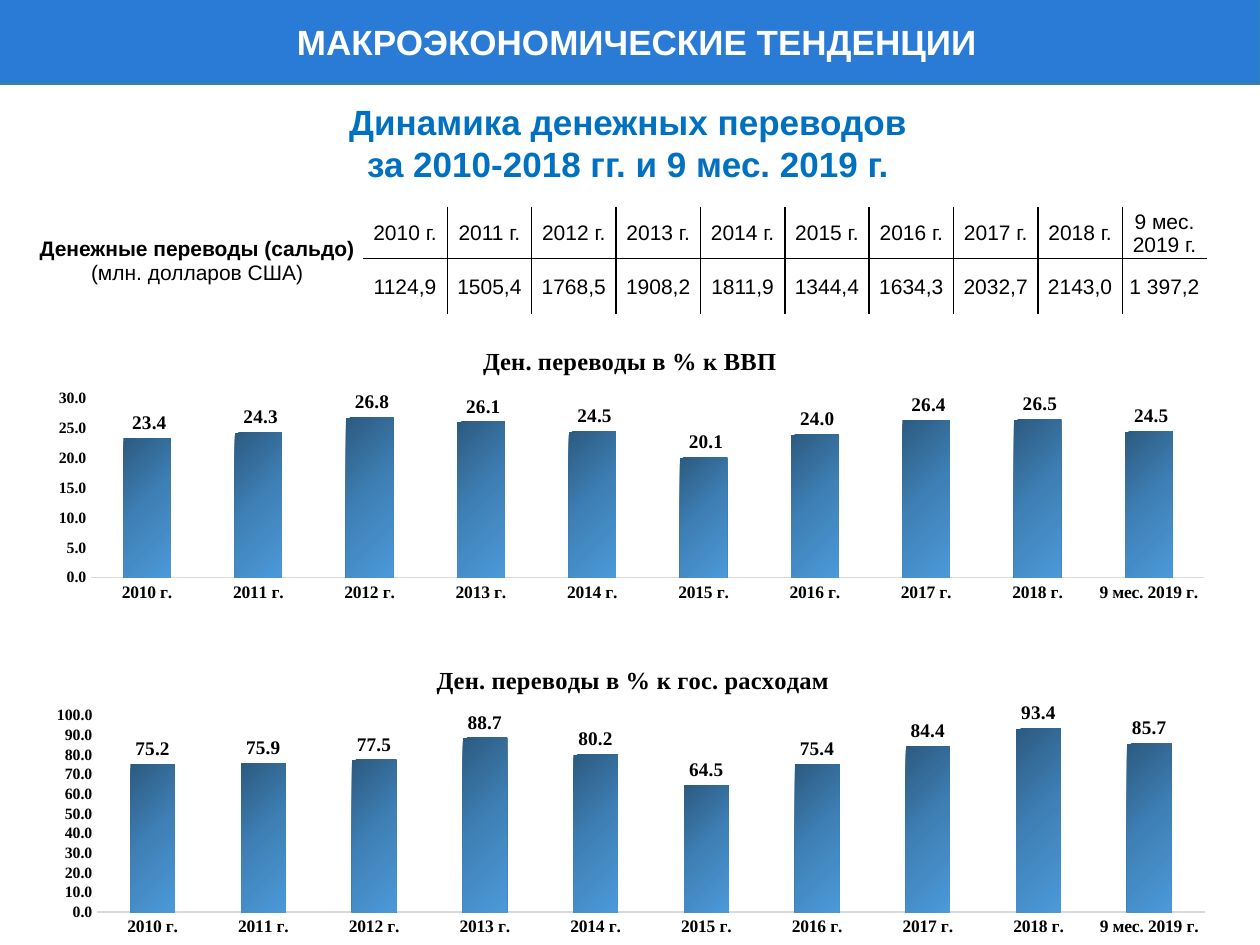
"""Build the remittance slide: heading band, balance table and two column charts."""
from pptx import Presentation, oxml, util as u
from pptx.chart.data import CategoryChartData
from pptx.dml.color import RGBColor
from pptx.enum import chart as ch, shapes, text
from pptx.oxml import ns

prs = Presentation()
prs.slide_width, prs.slide_height = u.Inches(10), u.Inches(7.5)
s = prs.slides.add_slide(prs.slide_layouts[6])
C = RGBColor.from_string


def box(x, y, w, h):
    W, H = prs.slide_width, prs.slide_height
    return [int(v * d / 100) for v, d in zip((x, y, w, h), (W, H, W, H))]


def style(font, color, **values):
    for name, value in values.items():
        setattr(font, name, value)
    font.color.rgb = C(color)


band = s.shapes.add_shape(shapes.MSO_SHAPE.RECTANGLE, *box(-0.1, -0.1, 100.1, 9))
band.shadow.inherit = False
band.fill.solid()
band.fill.fore_color.rgb = C("2A7BD5")
band.line.color.rgb = C("3B8594")
band.line.width = u.Pt(1)

headings = [
    (box(8.4, 1.5, 84.3, 5.9), "FFFFFF", ["МАКРОЭКОНОМИЧЕСКИЕ ТЕНДЕНЦИИ"]),
    (box(2.5, 10, 94.7, 10.3), "0070C0",
     ["Динамика денежных переводов", "за 2010-2018 гг. и 9 мес. 2019 г."]),
]
for place, color, lines in headings:
    tf = s.shapes.add_textbox(*place).text_frame
    tf.word_wrap = True
    tf.auto_size = text.MSO_AUTO_SIZE.SHAPE_TO_FIT_TEXT
    for i, line in enumerate(lines):
        p = tf.add_paragraph() if i else tf.paragraphs[0]
        p.alignment = text.PP_ALIGN.CENTER
        r = p.add_run()
        r.text = line
        style(r.font, color, size=u.Pt(20), name="Arial", bold=True)

years = [f"{y} г." for y in range(2010, 2019)] + ["9 мес. 2019 г."]
balance = ["1124,9", "1505,4", "1768,5", "1908,2", "1811,9",
           "1344,4", "1634,3", "2032,7", "2143,0", "1 397,2"]
rows = [["Денежные переводы (сальдо)\n(млн. долларов США)", *years], ["", *balance]]
last = len(years)

tbl = s.shapes.add_table(2, last + 1, *box(2.5, 21.9, 93.3, 11.3)).table
tbl.first_row = tbl.horz_banding = False
for i, col in enumerate(tbl.columns):
    col.width = u.Inches(0.67 if i else 2.63)
for row, height in zip(tbl.rows, (0.41, 0.44)):
    row.height = u.Inches(height)
tbl.cell(0, 0).merge(tbl.cell(1, 0))

cell_format = dict(margin_left=u.Inches(0.01), margin_right=u.Inches(0.01),
                   margin_top=u.Inches(0.01), margin_bottom=0,
                   vertical_anchor=text.MSO_ANCHOR.MIDDLE)
for i, values in enumerate(rows):
    for j, value in enumerate(values):
        cell = tbl.cell(i, j)
        for name, setting in cell_format.items():
            setattr(cell, name, setting)
        cell.text = value
        for k, p in enumerate(cell.text_frame.paragraphs):
            p.alignment = text.PP_ALIGN.CENTER
            style(p.font, "000000", size=u.Pt(12), name="Arial", bold=False)
            for r in p.runs:
                style(r.font, "000000", size=u.Pt(12), name="Arial", bold=j == k == 0)
        cell.fill.background()
        edges = {"B": j and i == 0, "T": j and i == 1, "R": 0 < j < last, "L": j > 1}
        for side, drawn in edges.items():
            fill = ('<a:solidFill><a:srgbClr val="000000"/></a:solidFill>'
                    if drawn else "<a:noFill/>")
            cell._tc.get_or_add_tcPr().insert(0, oxml.parse_xml(
                f'<a:ln{side} {ns.nsdecls("a")} w="12700">{fill}</a:ln{side}>'))

stops = "".join(f'<a:gs pos="{pos}000"><a:srgbClr val="{color}"/></a:gs>'
                for pos, color in ((0, "2C5B81"), (50, "3F81B7"), (100, "4B99D9")))
gradient = (f'<a:gradFill {ns.nsdecls("a")} rotWithShape="1"><a:gsLst>{stops}</a:gsLst>'
            '<a:lin ang="2700000" scaled="0"/></a:gradFill>')
serif = dict(name="Times New Roman", bold=True)

charts = [
    ("Ден. переводы в % к ВВП", box(2.5, 34.8, 95, 29.6), 135, 30, 5, r"#\ ##0.0",
     (0.05, 0.25, 0.93, 0.64), [23.4, 24.3, 26.8, 26.1, 24.5, 20.1, 24, 26.4, 26.5, 24.5]),
    ("Ден. переводы в % к гос. расходам", box(3, 68.5, 94.5, 31.5), 149, 100, 10, "0.0",
     (0.05, 0.23, 0.93, 0.66), [75.2, 75.9, 77.5, 88.7, 80.2, 64.5, 75.4, 84.4, 93.4, 85.7]),
]
for title, place, gap, top, step, fmt, inner, values in charts:
    data = CategoryChartData(number_format=fmt)
    data.categories = years
    data.add_series(title, values)
    chart = s.shapes.add_chart(ch.XL_CHART_TYPE.COLUMN_CLUSTERED, *place, data).chart
    style(chart.font, "000000", size=u.Pt(10), **serif)
    chart.has_legend = False
    chart.has_title = True
    tf = chart.chart_title.text_frame
    tf.text = title
    style(tf.paragraphs[0].runs[0].font, "000000", size=u.Pt(14), **serif)
    chart.chart_title.include_in_layout = False

    for axis, size in ((chart.category_axis, 10), (chart.value_axis, 9)):
        axis.has_major_gridlines = False
        axis.major_tick_mark = axis.minor_tick_mark = ch.XL_TICK_MARK.NONE
        style(axis.tick_labels.font, "000000", size=u.Pt(size), **serif)
    line = chart.category_axis.format.line
    line.color.rgb = C("D9D9D9")
    line.width = u.Pt(0.75)
    axis = chart.value_axis
    axis.format.line.fill.background()
    axis.minimum_scale, axis.maximum_scale, axis.major_unit = 0, top, step

    plot = chart.plots[0]
    plot.gap_width, plot.overlap, plot.vary_by_categories = gap, -27, False
    plot.has_data_labels = True
    labels = plot.data_labels
    labels.show_value = True
    labels.position = ch.XL_LABEL_POSITION.OUTSIDE_END
    style(labels.font, "000000", size=u.Pt(11), **serif)
    for target in (labels, axis.tick_labels):
        target.number_format = fmt
        target.number_format_is_linked = False
    plot.series[0].format.fill._xPr.insert(0, oxml.parse_xml(gradient))

    area = chart._chartSpace.xpath(".//c:plotArea")[0]
    for old in area.xpath("./c:layout"):
        area.remove(old)
    shares = "".join(f'<c:{tag} val="{v}"/>' for tag, v in zip("xywh", inner))
    area.insert(0, oxml.parse_xml(
        f'<c:layout {ns.nsdecls("c")}><c:manualLayout><c:layoutTarget val="inner"/>'
        f'<c:xMode val="edge"/><c:yMode val="edge"/>{shares}</c:manualLayout></c:layout>'))

prs.save("out.pptx")
